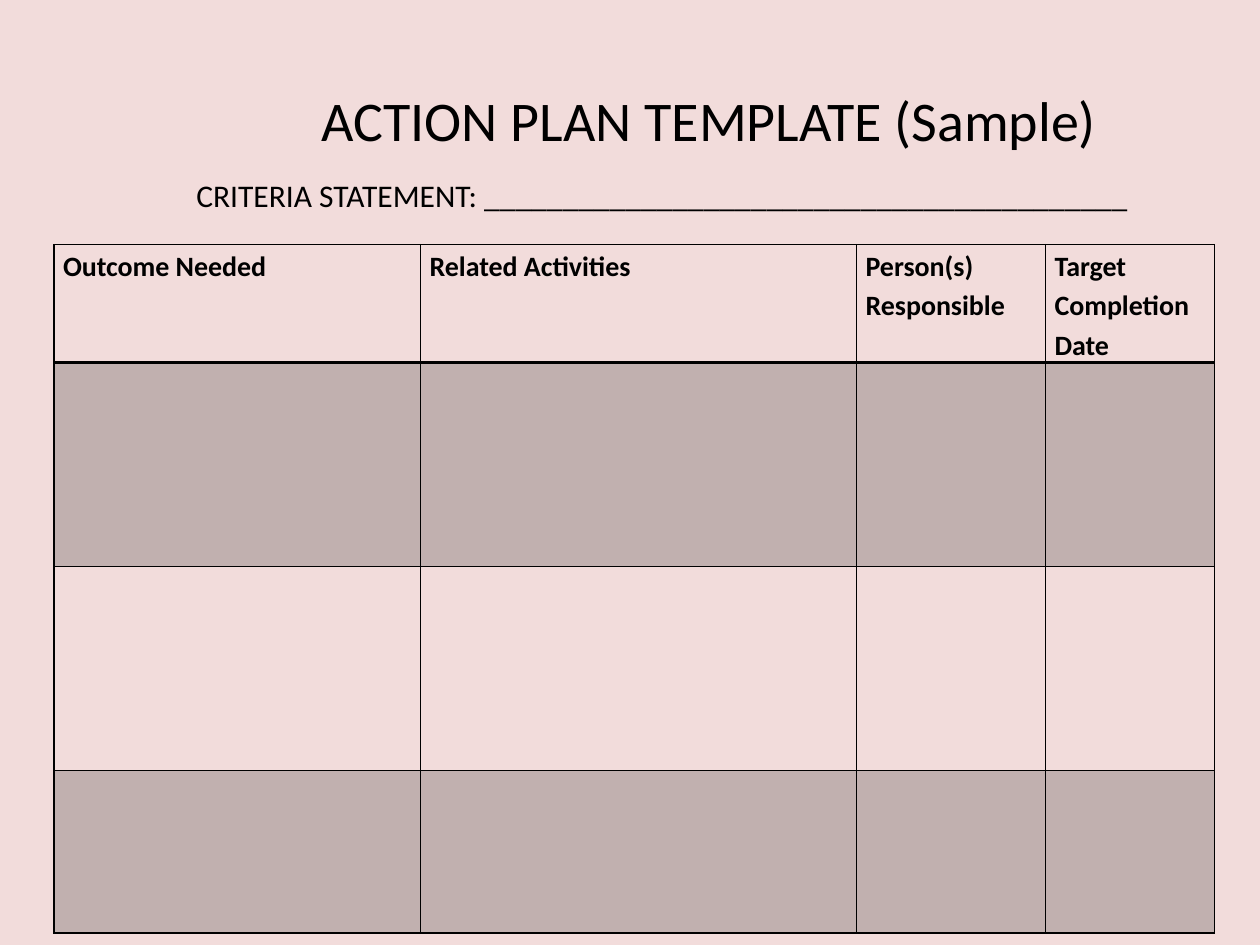
from dataclasses import dataclass

from lxml import etree
from pptx import Presentation
from pptx import util as u
from pptx.dml.color import RGBColor
from pptx.enum import text
from pptx.oxml.ns import qn

COLORS = {"background": "F2DCDB", "ink": "000000"}
FONT = "Calibri"
BAND_ALPHA = 20  # percent opacity of shaded rows
ROW_HEIGHTS = (2.06, 4.11, 4.11, 3.28)


@dataclass(frozen=True)
class Column:
    heading: str
    width: float


@dataclass(frozen=True)
class Label:
    content: str
    left: float
    top: float
    width: float
    height: float
    size: int
    align: text.PP_ALIGN
    anchor: text.MSO_ANCHOR


COLUMNS = (
    Column("Outcome Needed", 7.39),
    Column("Related Activities", 8.79),
    Column("Person(s) Responsible", 3.81),
    Column("Target Completion Date", 3.4),
)

LABELS = (
    Label("ACTION PLAN TEMPLATE (Sample)", 4.9, 1.32, 18.8, 2.16, 32,
          text.PP_ALIGN.CENTER, text.MSO_ANCHOR.MIDDLE),
    Label("CRITERIA STATEMENT: " + "_" * 41, 3.71, 3.43, 19.61, 1.02, 18,
          text.PP_ALIGN.LEFT, text.MSO_ANCHOR.TOP),
)


def write(tf, content: str, *, size: int, bold: bool = False,
          align=text.PP_ALIGN.LEFT, spacing: float = 1.0) -> None:
    p = tf.paragraphs[0]
    p.alignment = align
    p.line_spacing = spacing
    r = p.add_run()
    r.text = content
    r.font.name = FONT
    r.font.size = u.Pt(size)
    r.font.bold = bold
    r.font.color.rgb = RGBColor.from_string(COLORS["ink"])


def add_label(s, label: Label) -> None:
    sp = s.shapes.add_textbox(u.Cm(label.left), u.Cm(label.top),
                              u.Cm(label.width), u.Cm(label.height))
    tf = sp.text_frame
    tf.word_wrap = True
    tf.vertical_anchor = label.anchor
    write(tf, label.content, size=label.size, align=label.align)


def set_fill(cell, shaded: bool) -> None:
    if not shaded:
        cell.fill.background()
        return
    cell.fill.solid()
    cell.fill.fore_color.rgb = RGBColor.from_string(COLORS["ink"])
    color = cell._tc.tcPr.find(".//" + qn("a:srgbClr"))
    etree.SubElement(color, qn("a:alpha"), val=str(BAND_ALPHA * 1000))


def set_borders(cell, **widths: float) -> None:
    """Border lines must come before the fill in the cell properties."""
    tc_pr = cell._tc.get_or_add_tcPr()
    for i, (side, width) in enumerate(widths.items()):
        ln = etree.Element(qn(f"a:ln{side}"), w=str(u.Pt(width)))
        fill = etree.SubElement(ln, qn("a:solidFill"))
        etree.SubElement(fill, qn("a:srgbClr"), val=COLORS["ink"])
        tc_pr.insert(i, ln)


def add_plan_table(s) -> None:
    table = s.shapes.add_table(
        len(ROW_HEIGHTS), len(COLUMNS), u.Cm(1.09), u.Cm(4.93),
        u.Cm(sum(c.width for c in COLUMNS)), u.Cm(sum(ROW_HEIGHTS))).table
    table.first_row = table.horz_banding = False
    for row, height in zip(table.rows, ROW_HEIGHTS):
        row.height = u.Cm(height)
    for j, column in enumerate(COLUMNS):
        table.columns[j].width = u.Cm(column.width)
        for i in range(len(ROW_HEIGHTS)):
            cell = table.cell(i, j)
            cell.margin_left = cell.margin_right = u.Cm(0.18)
            cell.margin_top = cell.margin_bottom = 0
            set_fill(cell, shaded=i % 2 == 1)
            set_borders(cell, L=1, R=1, T=2 if i == 1 else 1,
                        B=2 if i == 0 else 1)
        write(table.cell(0, j).text_frame, column.heading,
              size=16, bold=True, spacing=1.15)


def main() -> None:
    prs = Presentation()
    prs.slide_width, prs.slide_height = u.Cm(25.4), u.Cm(19.05)
    s = prs.slides.add_slide(prs.slide_layouts[6])

    # Background
    s.background.fill.solid()
    s.background.fill.fore_color.rgb = RGBColor.from_string(COLORS["background"])

    # Action plan grid
    add_plan_table(s)

    # Title and criteria line
    for label in LABELS:
        add_label(s, label)

    prs.save("out.pptx")


if __name__ == "__main__":
    main()
